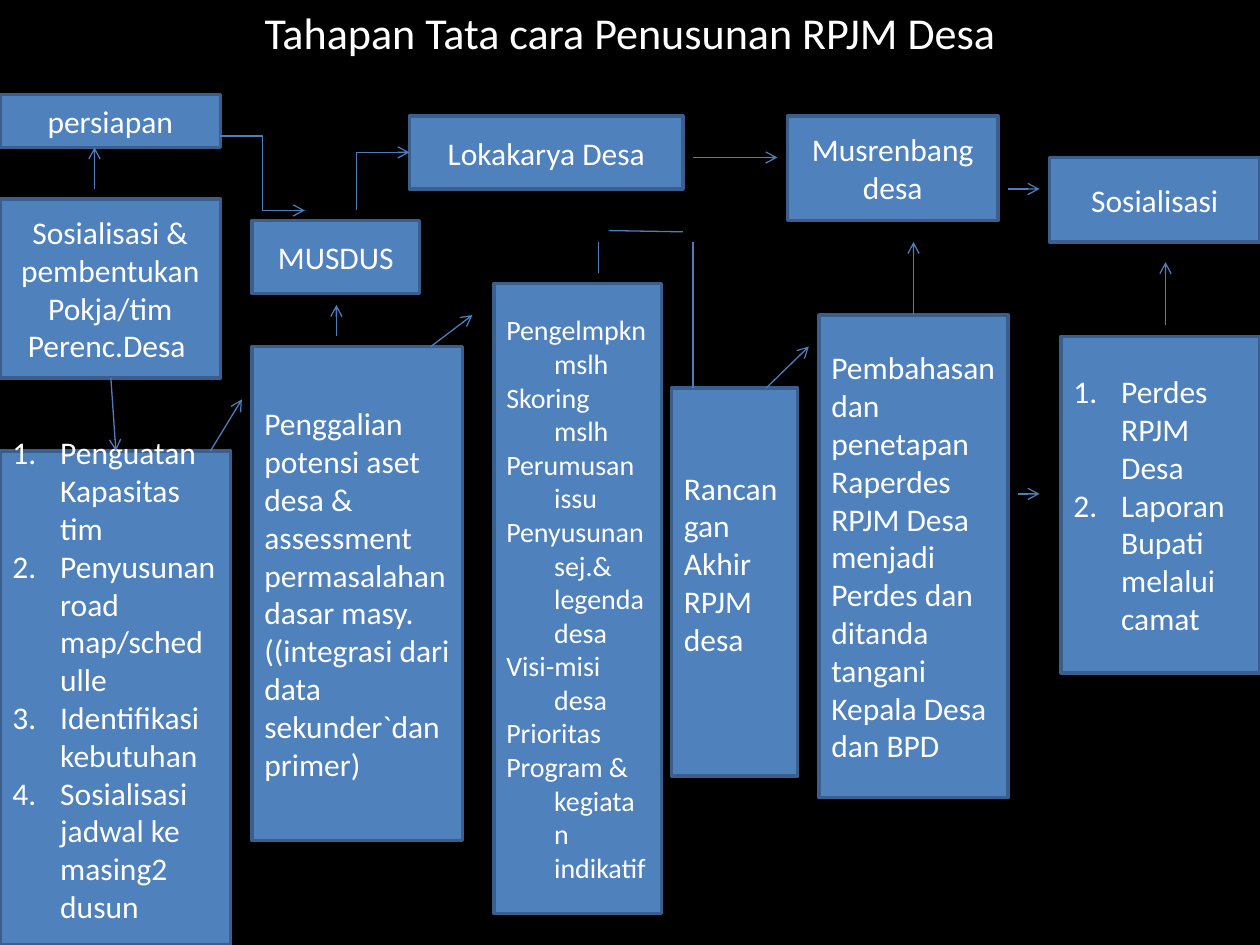
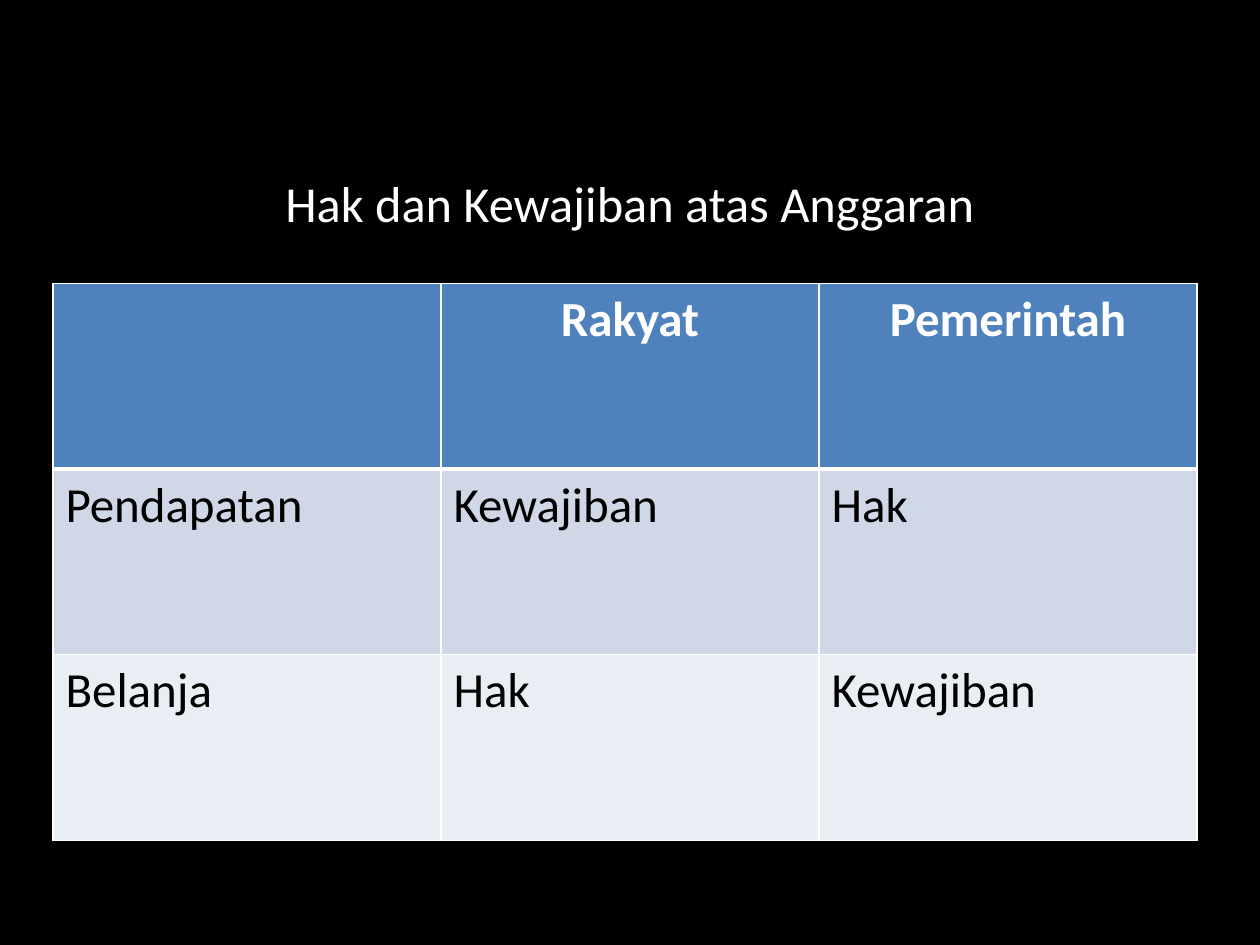
import dataclasses

import lxml.etree
import pptx
import pptx.dml.color
import pptx.enum.shapes
import pptx.enum.text
import pptx.oxml.ns
import pptx.util

Inches = pptx.util.Inches
Pt = pptx.util.Pt
qn = pptx.oxml.ns.qn
ALIGN = pptx.enum.text.PP_ALIGN
KIND = pptx.enum.shapes.MSO_CONNECTOR

FONT = "Calibri"
BLACK, WHITE = "000000", "FFFFFF"
BLUE, EDGE, WIRE = "4F81BD", "3A5F8C", "4B7EBC"
BANDS = [BLUE, "D0D8E8", "E9EDF4"]
HANG = 0.38


@dataclasses.dataclass
class Box:
    """A blue step box with its text."""
    left: float
    top: float
    width: float
    height: float
    lines: list[str]
    size: int = 18
    center: bool = False
    hang: bool = False
    number: bool = False
    foot: float = 0.05


@dataclasses.dataclass
class Link:
    """A line between two points, with an arrowhead at one end or none."""
    start: tuple[float, float]
    end: tuple[float, float]
    head: str = "tailEnd"
    form: str = "line"


STEPS = [
    Box(0, 0.75, 1.75, 0.42, ["persiapan"], center=True),
    Box(0, 1.58, 1.75, 1.42, ["Sosialisasi & pembentukan Pokja/tim Perenc.Desa "], center=True),
    Box(0, 3.58, 1.83, 3.92,
        ["Penguatan Kapasitas tim", "Penyusunan road map/schedulle",
         "Identifikasi kebutuhan", "Sosialisasi jadwal ke masing2 dusun"],
        hang=True, number=True, foot=0.35),
    Box(2, 1.75, 1.33, 0.58, ["MUSDUS"], center=True),
    Box(2, 2.75, 1.67, 3.92,
        ["Penggalian potensi aset desa & assessment permasalahan dasar masy. "
         "((integrasi dari data sekunder`dan primer)"]),
    Box(3.25, 0.92, 2.17, 0.58, ["Lokakarya Desa"], center=True),
    Box(5.33, 3.08, 1, 3.08, ["Rancangan Akhir RPJM desa"], foot=0.35),
    Box(6.25, 0.92, 1.67, 0.83, ["Musrenbang desa"], center=True),
    Box(6.5, 2.5, 1.5, 3.83,
        ["Pembahasan dan penetapan Raperdes RPJM Desa menjadi Perdes dan "
         "ditanda tangani Kepala Desa dan BPD"]),
    Box(8.33, 1.25, 1.67, 0.67, ["Sosialisasi"], center=True),
    Box(8.42, 2.67, 1.58, 2.67, ["Perdes RPJM Desa", "Laporan Bupati melalui camat"],
        hang=True, number=True),
    Box(3.92, 2.25, 1.33, 5,
        ["Pengelmpkn mslh", "Skoring mslh", "Perumusan issu", "Penyusunan sej.& legenda desa",
         "Visi-misi desa", "Prioritas", "Program & kegiatan indikatif"], size=16, hang=True),
]

LINKS = [
    Link((0.75, 1.5), (0.75, 1.17)),
    Link((0.88, 3), (0.92, 3.58)),
    Link((2.67, 2.67), (2.67, 2.42)),
    Link((1.75, 1.08), (2.42, 1.67), form="bentConnector3"),
    Link((1.67, 3.58), (1.92, 3.17)),
    Link((3.25, 1.21), (2.83, 1.67), head="headEnd", form="bentConnector2"),
    Link((5.5, 1.25), (6.17, 1.25)),
    Link((7.25, 2.5), (7.25, 1.92)),
    Link((9.25, 2.58), (9.25, 2.08)),
    Link((8, 1.5), (8.25, 1.5)),
    Link((8.08, 3.92), (8.25, 3.92)),
    Link((6.08, 3.08), (6.42, 2.75)),
    Link((3.42, 2.75), (3.75, 2.5)),
    Link((4.75, 2.17), (4.75, 1.92), head=""),
    Link((4.83, 1.83), (5.42, 1.84), head=""),
    Link((5.5, 1.92), (5.5, 3.08), head=""),
]

ROWS = [
    ["", "Rakyat", "Pemerintah"],
    ["Pendapatan", "Kewajiban", "Hak"],
    ["Belanja", "Hak", "Kewajiban"],
]


def tint(code: str) -> pptx.dml.color.RGBColor:
    """Turn a hex string into a colour."""
    return pptx.dml.color.RGBColor.from_string(code)


def paint(fill, code: str) -> None:
    """Make a fill solid in one colour."""
    fill.solid()
    fill.fore_color.rgb = tint(code)


def write(frame, lines: list[str], *, size: float = 18, color: str = WHITE, bold: bool = False,
          center: bool = False, hang: bool = False, number: bool = False) -> None:
    """Write paragraphs into a text frame in one format."""
    frame.word_wrap = True
    for index, line in enumerate(lines):
        para = frame.add_paragraph() if index else frame.paragraphs[0]
        para.text = line
        para.alignment = ALIGN.CENTER if center else ALIGN.LEFT
        props = para._p.get_or_add_pPr()
        if hang:
            props.set("marL", str(Inches(HANG)))
            props.set("indent", str(Inches(-HANG)))
        if number:
            lxml.etree.SubElement(props, qn("a:buAutoNum"), type="arabicPeriod")
        font = para.font
        font.name, font.size, font.bold = FONT, Pt(size), bold
        font.color.rgb = tint(color)


def start(deck):
    """Add a blank slide with a black ground."""
    slide = deck.slides.add_slide(deck.slide_layouts[6])
    paint(slide.background.fill, BLACK)
    return slide


def title(slide, text: str, height: float, size: float, inset: float = 0) -> None:
    """Add a centred title at the top of a slide."""
    frame = slide.shapes.add_textbox(Inches(0.5), 0, Inches(9), Inches(height)).text_frame
    frame.vertical_anchor = pptx.enum.text.MSO_ANCHOR.MIDDLE
    frame.margin_top, frame.margin_bottom = Inches(inset), 0
    write(frame, [text], size=size, center=True)


def draw(slide, box: Box) -> None:
    """Draw one step box."""
    area = map(Inches, (box.left, box.top, box.width, box.height))
    shape = slide.shapes.add_shape(pptx.enum.shapes.MSO_SHAPE.RECTANGLE, *area)
    shape.shadow.inherit = False
    paint(shape.fill, BLUE)
    shape.line.color.rgb = tint(EDGE)
    shape.line.width = Pt(2)
    frame = shape.text_frame
    frame.vertical_anchor = pptx.enum.text.MSO_ANCHOR.MIDDLE
    frame.margin_bottom = Inches(box.foot)
    write(frame, box.lines, size=box.size, center=box.center, hang=box.hang, number=box.number)


def join(slide, link: Link) -> None:
    """Draw one line or arrow."""
    kind = KIND.STRAIGHT if link.form == "line" else KIND.ELBOW
    wire = slide.shapes.add_connector(kind, *map(Inches, link.start + link.end))
    wire.line.color.rgb = tint(WIRE)
    wire.line.width = Pt(0.75)
    props = wire._element.spPr
    props.find(qn("a:prstGeom")).set("prst", link.form)
    if link.head:
        lxml.etree.SubElement(props.find(qn("a:ln")), qn("a:" + link.head), type="arrow")
    lxml.etree.SubElement(props, qn("a:effectLst"))


def frame_cell(cell, row: int) -> None:
    """Give a cell white borders, thick below the header row."""
    props = cell._tc.get_or_add_tcPr()
    thick = {0: "lnB", 1: "lnT"}.get(row)
    for index, side in enumerate(("lnL", "lnR", "lnT", "lnB")):
        line = lxml.etree.Element(qn("a:" + side), w=str(Pt(3 if side == thick else 1)))
        fill = lxml.etree.SubElement(line, qn("a:solidFill"))
        lxml.etree.SubElement(fill, qn("a:srgbClr"), val=WHITE)
        props.insert(index, line)


def grid(slide) -> None:
    """Add the table of rights and duties."""
    area = map(Inches, (0.42, 2.25, 9.08, 4.42))
    table = slide.shapes.add_table(len(ROWS), len(ROWS[0]), *area).table
    for column, width in zip(table.columns, (3.08, 3, 3)):
        column.width = Inches(width)
    for row, words in enumerate(ROWS):
        top = row == 0
        for column, word in enumerate(words):
            cell = table.cell(row, column)
            paint(cell.fill, BANDS[row])
            frame_cell(cell, row)
            write(cell.text_frame, [word], size=28, color=WHITE if top else BLACK,
                  bold=top, center=top)


def main() -> None:
    """Build and save the deck."""
    deck = pptx.Presentation()
    deck.slide_width, deck.slide_height = Inches(10), Inches(7.5)

    stages = start(deck)
    title(stages, "Tahapan Tata cara Penusunan RPJM Desa", 0.5, 25.2)
    for box in STEPS:
        draw(stages, box)
    for link in LINKS:
        join(stages, link)

    rights = start(deck)
    title(rights, "Hak dan Kewajiban atas Anggaran", 2.67, 28.8, inset=0.54)
    grid(rights)
    deck.save("out.pptx")


if __name__ == "__main__":
    main()
